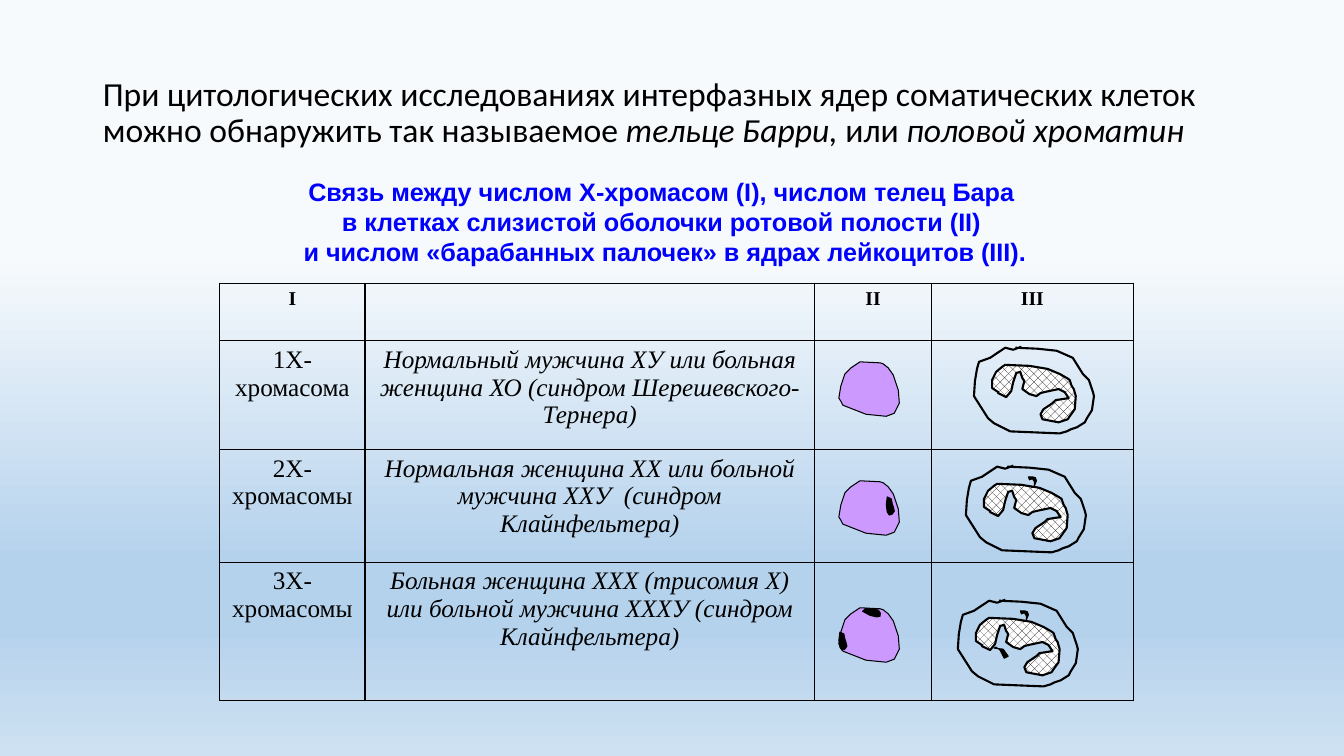
from copy import deepcopy

from lxml import etree
from pptx import Presentation
from pptx.dml.color import RGBColor
from pptx.enum.dml import MSO_PATTERN
from pptx.enum.text import MSO_ANCHOR, PP_ALIGN
from pptx.oxml.ns import qn
from pptx.util import Pt

PX = 9144  # 100 px to the inch
LEFT, CENTER = PP_ALIGN.LEFT, PP_ALIGN.CENTER
MIDDLE = MSO_ANCHOR.MIDDLE
HATCH = MSO_PATTERN.from_xml("pct40")

GRADIENT = [(34, "F7FAFD"), (74, "B5D2EC"), (83, "B5D2EC"), (100, "CEE1F2")]
COLUMNS = [144, 446, 116, 200]
ROWS = [
    (57, ["I", "", "II", "III"]),
    (108, ["1Х-хромасома", "Нормальный мужчина ХУ или больная женщина ХО "
           "(синдром Шерешевского-Тернера)"]),
    (112, ["2Х-хромасомы", "Нормальная женщина ХХ или больной мужчина ХХУ  "
           "(синдром Клайнфельтера)"]),
    (137, ["3Х-хромасомы", "Больная женщина ХХХ (трисомия Х) или больной "
           "мужчина ХХХУ (синдром Клайнфельтера)"]),
]

# Outlines in px, each from its own top left corner
CELL = [(12, 6), (18, 2), (21, 0), (41, 1), (44, 2), (49, 6), (54, 13), (57, 22),
        (59, 28), (60, 41), (55, 51), (47, 54), (27, 52), (4, 43), (2, 39),
        (0, 36), (2, 24), (6, 12)]
BARR_BODY = [(1, 0), (5, 2), (6, 7), (7, 10), (8, 14), (6, 17), (3, 18), (1, 15), (0, 8)]
LEUKOCYTE = [(41, 1), (63, 2), (82, 4), (98, 11), (108, 27), (114, 33), (117, 42),
             (118, 45), (119, 49), (117, 63), (112, 71), (110, 75), (102, 80),
             (96, 82), (92, 84), (85, 86), (60, 85), (36, 84), (20, 76), (14, 71),
             (0, 49), (1, 34), (3, 22), (5, 15), (16, 11), (25, 5), (28, 3),
             (31, 1), (39, 3), (47, 0)]
NUCLEUS = [(24, 45), (18, 41), (18, 33), (22, 25), (28, 20), (31, 18), (55, 19),
           (73, 22), (85, 27), (92, 31), (95, 33), (97, 39), (99, 42), (101, 49),
           (100, 62), (95, 69), (93, 72), (84, 75), (68, 72), (66, 67), (69, 62),
           (78, 56), (81, 53), (94, 51), (90, 45), (84, 42), (70, 45), (66, 46),
           (62, 49), (55, 47), (48, 42), (50, 34), (48, 31), (46, 25), (42, 26),
           (39, 35), (37, 44), (32, 50), (24, 46)]
DRUMSTICK = [(68, 20), (68, 16), (66, 13), (63, 14), (62, 11), (66, 11), (69, 12),
             (70, 15), (68, 20), (65, 22)]
SECOND_DRUMSTICK = [(36, 48), (45, 49), (50, 56), (46, 58), (44, 54), (42, 50), (38, 47)]


def write(p, text, font, size, color="000000", bold=False, italic=False, align=CENTER):
    p.alignment = align
    for i, line in enumerate(text.split("\n")):
        if i:
            p.add_line_break()
        r = p.add_run()
        r.text = line
        r.font.name, r.font.size = font, Pt(size)
        r.font.bold, r.font.italic = bold, italic
        r.font.color.rgb = RGBColor.from_string(color)


def outline(shapes, points, x, y, fill=None, width=0.75, closed=True):
    """Draw a freeform whose own origin lies at x, y; fill is a hex, HATCH or None."""
    builder = shapes.build_freeform(*points[0], scale=PX)
    builder.add_line_segments(points[1:], close=closed)
    sp = builder.convert_to_shape(x * PX, y * PX)
    sp.shadow.inherit = False
    black = RGBColor.from_string("000000")
    sp.line.color.rgb, sp.line.width = black, Pt(width)
    if fill is None:
        sp.fill.background()
    elif fill == HATCH:
        sp.fill.patterned()
        sp.fill.pattern = HATCH
        sp.fill.fore_color.rgb = black
        sp.fill.back_color.rgb = RGBColor.from_string("FFFFFF")
    else:
        sp.fill.solid()
        sp.fill.fore_color.rgb = RGBColor.from_string(fill)
    return sp


prs = Presentation()
prs.slide_width, prs.slide_height = 1333 * PX, 750 * PX
slide = prs.slides.add_slide(prs.slide_layouts[5])

# Background
fill = slide.background.fill
fill.gradient()
fill.gradient_angle = 270
stop_list = slide.element.find(".//" + qn("a:gsLst"))
while len(stop_list) < len(GRADIENT):
    stop_list.append(deepcopy(stop_list[0]))
for stop, (percent, color) in zip(fill.gradient_stops, GRADIENT):
    stop.position = percent / 100
    stop.color.rgb = RGBColor.from_string(color)

# Title and table caption
title = slide.shapes.title
title.left, title.top, title.width, title.height = [v * PX for v in (92, 40, 1150, 145)]
title.text_frame.vertical_anchor = MIDDLE
p = title.text_frame.paragraphs[0]
p.line_spacing = 0.9
for text, italic in [
    ("При цитологических исследованиях интерфазных ядер соматических клеток "
     "можно обнаружить так называемое ", False),
    ("тельце Барри,", True), (" или ", False), ("половой хроматин", True),
]:
    write(p, text, "Calibri", 24, italic=italic, align=LEFT)

caption = slide.shapes.add_textbox(*[v * PX for v in (234, 170, 851, 100)])
caption.text_frame.word_wrap = True
write(caption.text_frame.paragraphs[0],
      "Связь между числом Х-хромасом (I), числом телец Бара \n"
      "в клетках слизистой оболочки ротовой полости (II) \n"
      "и числом «барабанных палочек» в ядрах лейкоцитов (III).",
      "Arial", 18, color="0000FF", bold=True)

# Mouth cells with Barr bodies
for y in (359, 477, 603):
    outline(slide.shapes, CELL, 832, y, fill="CC99FF")
for x, y, angle in [(879, 493, 0), (861, 598, 292.3), (832, 627, 0)]:
    outline(slide.shapes, BARR_BODY, x, y, fill="000000").rotation = angle

# Leukocytes with drumsticks
for x, y, drumsticks in [
    (966, 344, []),
    (958, 462, [DRUMSTICK]),
    (950, 595, [DRUMSTICK, SECOND_DRUMSTICK]),
]:
    group = slide.shapes.add_group_shape().shapes
    outline(group, LEUKOCYTE, x, y, width=1.5, closed=False)
    outline(group, NUCLEUS, x, y, fill=HATCH, width=1.5)
    for drumstick in drumsticks:
        outline(group, drumstick, x, y, fill="000000")

# Table
frame = slide.shapes.add_table(len(ROWS), len(COLUMNS), 218 * PX, 281 * PX,
                               sum(COLUMNS) * PX, sum(h for h, _ in ROWS) * PX)
table = frame.table
table.first_row = table.horz_banding = False
for column, width in zip(table.columns, COLUMNS):
    column.width = width * PX
for i, (height, texts) in enumerate(ROWS):
    table.rows[i].height = height * PX
    for j, cell in enumerate(table.rows[i].cells):
        if j < len(texts) and texts[j]:
            write(cell.text_frame.paragraphs[0], texts[j], "Times New Roman",
                  18 if i else 14, bold=i == 0, italic=i > 0 and j == 1)
        tc_pr = cell._tc.get_or_add_tcPr()
        for side in ("a:lnL", "a:lnR", "a:lnT", "a:lnB"):
            border = etree.SubElement(tc_pr, qn(side), w=str(Pt(1)))
            solid = etree.SubElement(border, qn("a:solidFill"))
            etree.SubElement(solid, qn("a:srgbClr"), val="000000")
        cell.fill.background()

prs.save("out.pptx")
